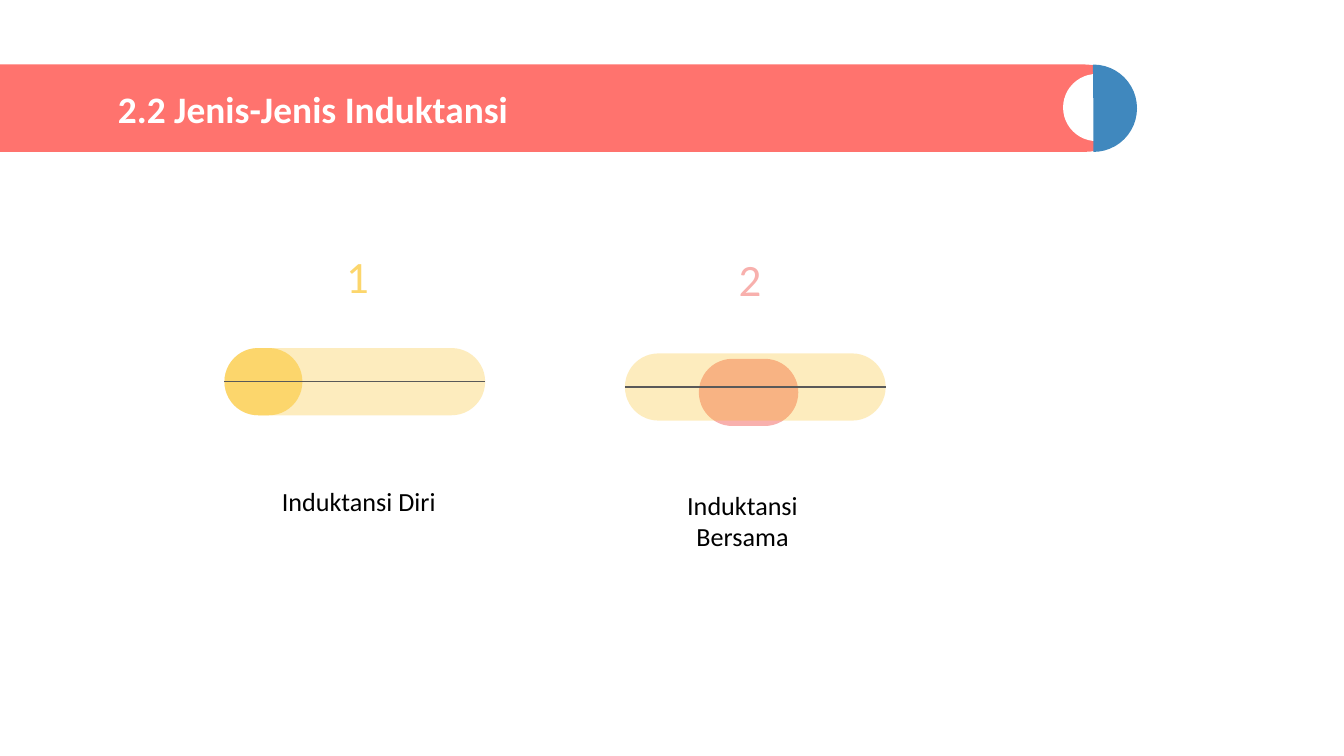
from dataclasses import dataclass

from lxml.etree import SubElement
from pptx import Presentation
from pptx.dml.color import RGBColor
from pptx.enum.shapes import MSO_CONNECTOR, MSO_SHAPE
from pptx.enum.text import MSO_ANCHOR, PP_ALIGN
from pptx.oxml.ns import qn
from pptx.util import Inches, Pt

COLUMNS, ROWS = 100, 56.25
UNIT = Inches(10) / COLUMNS


@dataclass(frozen=True)
class Theme:
    """Colours and type of the slide."""
    font: str = "Calibri"
    title_size: int = 20
    number_size: int = 24
    label_size: int = 14
    coral: str = "FF736E"
    blue: str = "4088BE"
    white: str = "FFFFFF"
    black: str = "000000"
    gold: str = "FBBE18"
    yellow: str = "FCD66C"
    pink: str = "F8B0AD"
    gray: str = "595959"


@dataclass(frozen=True)
class Box:
    """An area measured in grid columns and rows."""
    left: float
    top: float
    width: float
    height: float

    def inside(self, left, top, width, height):
        """Return an area placed relative to this one."""
        return Box(self.left + left, self.top + top, width, height)

    def lengths(self):
        """Return left, top, width and height in slide units."""
        return [round(n * UNIT) for n in (self.left, self.top, self.width, self.height)]


@dataclass(frozen=True)
class Kind:
    """One kind of inductance and the offsets of its parts."""
    number: str
    label: str
    color: str
    area: Box
    number_at: tuple
    label_at: tuple
    bar_at: tuple
    marker_at: tuple
    marker_behind: bool


THEME = Theme()
KINDS = [
    Kind("1", "Induktansi Diri", THEME.yellow, Box(16.7, 17.5, 19.4, 22.4),
         (3.1, 0, 13.6, 4.8), (2.1, 17.6, 15.8, 4.8), (0, 8.4, 19.4, 5),
         (0, 8.4, 5.8, 5), False),
    Kind("2", "Induktansi Bersama", THEME.pink, Box(46.5, 17.7, 19.4, 22.5),
         (2.5, 0, 13.6, 4.8), (1.4, 17.7, 14.7, 4.8), (0, 8.6, 19.4, 5),
         (5.5, 9, 7.4, 5), True),
]


def add_filled(slide, preset, box, color, adjustments=(), opacity=None):
    """Add a preset shape with a plain fill and no line."""
    shape = slide.shapes.add_shape(preset, *box.lengths())
    shape.shadow.inherit = False
    shape.line.fill.background()
    shape.fill.solid()
    shape.fill.fore_color.rgb = RGBColor.from_string(color)
    for index, value in enumerate(adjustments):
        shape.adjustments[index] = value
    if opacity is not None:
        color_element = shape.element.spPr.find(qn("a:solidFill"))[0]
        SubElement(color_element, qn("a:alpha")).set("val", str(opacity * 1000))
    return shape


def add_pill(slide, box, color, opacity=None):
    """Add a bar with fully rounded ends."""
    return add_filled(slide, MSO_SHAPE.ROUNDED_RECTANGLE, box, color, [0.5], opacity)


def add_text(slide, box, text, size, color, align=PP_ALIGN.CENTER,
             anchor=MSO_ANCHOR.TOP, bold=False):
    """Add a wrapped text box with one paragraph."""
    frame = slide.shapes.add_textbox(*box.lengths()).text_frame
    frame.word_wrap = True
    frame.vertical_anchor = anchor
    frame.margin_left = frame.margin_right = Inches(0.1)
    frame.margin_top = frame.margin_bottom = Inches(0.1)
    paragraph = frame.paragraphs[0]
    paragraph.text = text
    paragraph.alignment = align
    font = paragraph.font
    font.name, font.size, font.bold = THEME.font, Pt(size), bold
    font.color.rgb = RGBColor.from_string(color)


def add_midline(slide, pill):
    """Draw a line joining the right and left ends of a pill."""
    line = slide.shapes.add_connector(MSO_CONNECTOR.STRAIGHT, 0, 0, 0, 0)
    line.begin_connect(pill, 3)
    line.end_connect(pill, 1)
    line.line.color.rgb = RGBColor.from_string(THEME.gray)
    line.line.width = Pt(0.75)
    SubElement(line.element.spPr, qn("a:effectLst"))


def add_header(slide, box, title):
    """Add the title band with its round end piece."""
    add_pill(slide, box, THEME.coral)
    ring = add_filled(slide, MSO_SHAPE.OVAL, box.inside(82.3, 0.7, 5, 5), THEME.white)
    half = add_filled(slide, MSO_SHAPE.PIE, box.inside(81.3, 0, 6.5, 6.5),
                      THEME.blue, [53.67, 162])
    ring.rotation = half.rotation = 180
    add_text(slide, box.inside(11, 1.2, 69.7, 4.1), title, THEME.title_size,
             THEME.white, PP_ALIGN.LEFT, MSO_ANCHOR.MIDDLE, True)


def add_kind(slide, box, kind):
    """Add one kind: its number, pill with marker, and label."""
    add_text(slide, box.inside(*kind.label_at), kind.label, THEME.label_size, THEME.black)
    add_text(slide, box.inside(*kind.number_at), kind.number, THEME.number_size, kind.color)
    marker_box = box.inside(*kind.marker_at)
    if kind.marker_behind:
        add_pill(slide, marker_box, kind.color)
    bar = add_pill(slide, box.inside(*kind.bar_at), THEME.gold, 28)
    if not kind.marker_behind:
        add_pill(slide, marker_box, kind.color)
    add_midline(slide, bar)


def main():
    """Build and save the presentation."""
    presentation = Presentation()
    presentation.slide_width = round(COLUMNS * UNIT)
    presentation.slide_height = round(ROWS * UNIT)
    slide = presentation.slides.add_slide(presentation.slide_layouts[6])
    add_header(slide, Box(-3.2, 4.8, 87.2, 6.5), "2.2 Jenis-Jenis Induktansi")
    for kind in KINDS:
        add_kind(slide, kind.area, kind)
    presentation.save("out.pptx")


if __name__ == "__main__":
    main()
